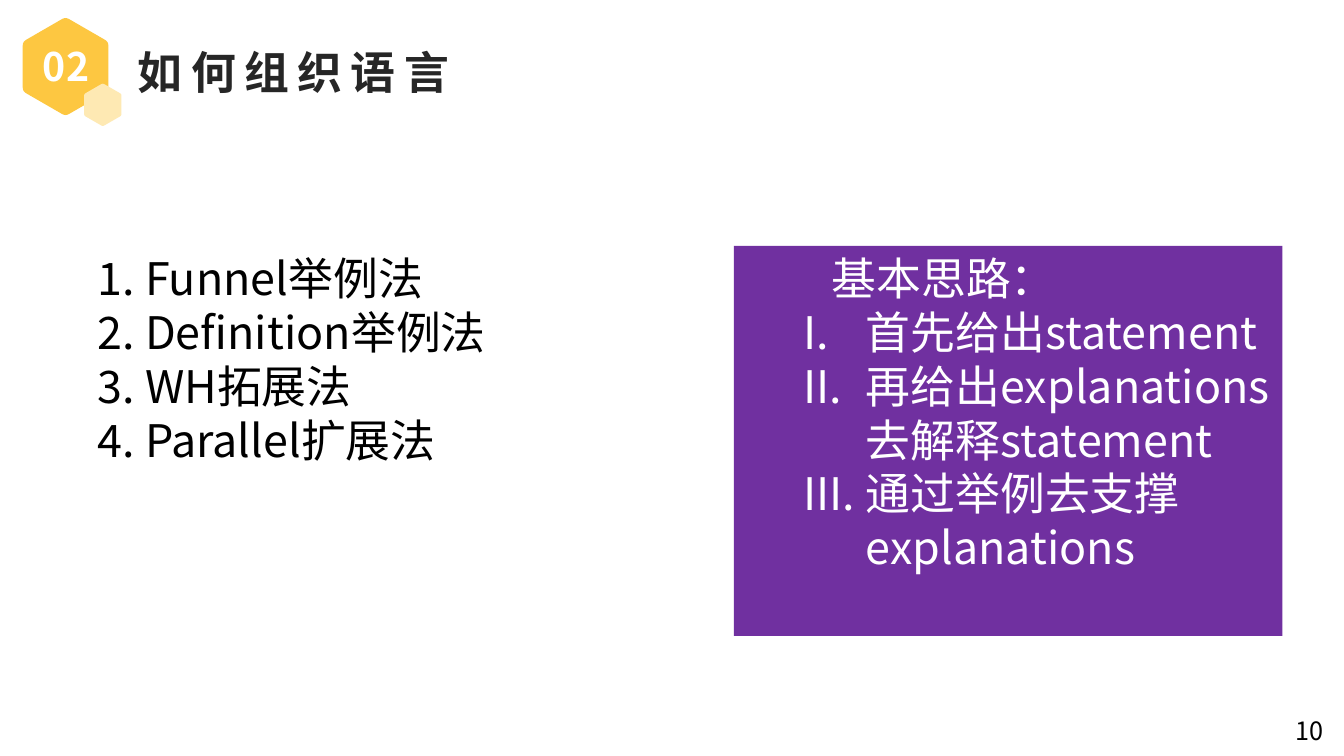
import math

from lxml import etree
from pptx import Presentation
from pptx.dml.color import RGBColor
from pptx.enum.shapes import MSO_SHAPE
from pptx.enum.text import MSO_ANCHOR, PP_ALIGN
from pptx.oxml.ns import qn
from pptx.util import Inches, Pt

LEFT, CENTER = PP_ALIGN.LEFT, PP_ALIGN.CENTER
TOP = MSO_ANCHOR.TOP
RECTANGLE = MSO_SHAPE.RECTANGLE

FONT = "Noto Sans CJK SC"
COLORS = {
    "amber": "FDC741",
    "cream": "FEE9B3",
    "title": "262626",
    "purple": "7030A0",
    "white": "FFFFFF",
    "black": "000000",
}
METHODS = ["1. Funnel举例法", "2. Definition举例法", "3. WH拓展法", "4. Parallel扩展法"]
STEPS = ["首先给出statement", "再给出explanations去解释statement", "通过举例去支撑explanations"]


def rgb(name):
    return RGBColor.from_string(COLORS[name])


def fill_plain(sp, color):
    sp.fill.solid()
    sp.fill.fore_color.rgb = rgb(color)
    sp.line.fill.background()
    sp.shadow.inherit = False


def write(sp, lines, size, color, bold=False, align=LEFT, wrap=True, spacing=0):
    """Fill a shape with one paragraph per line; spacing is between letters, in points."""
    tf = sp.text_frame
    tf.text = "\n".join(lines)
    tf.word_wrap = wrap
    tf.vertical_anchor = TOP
    for p in tf.paragraphs:
        p.alignment = align
        p.line_spacing = Pt(size * 1.2)
        for r in p.runs:
            r.font.name = FONT
            r.font.size = Pt(size)
            r.font.bold = bold
            r.font.color.rgb = rgb(color)
            rPr = r.font._element
            etree.SubElement(rPr, qn("a:ea"), typeface=FONT)
            if spacing:
                rPr.set("spc", str(spacing * 100))
    return tf.paragraphs


def indent(p, margin, first):
    pPr = p._p.get_or_add_pPr()
    pPr.set("marL", str(Inches(margin)))
    pPr.set("indent", str(Inches(first)))
    return pPr


def add_text(slide, x, y, w, h, lines, size, color, **style):
    sp = slide.shapes.add_textbox(Inches(x), Inches(y), Inches(w), Inches(h))
    return write(sp, lines, size, color, **style)


def add_hexagon(slide, cx, cy, width, color):
    """Draw a hexagon standing on a corner, with slightly rounded corners."""
    radius = width / math.sqrt(3)
    trim = 0.08
    corners = [(cx + radius * math.sin(math.radians(a)), cy - radius * math.cos(math.radians(a)))
               for a in range(0, 360, 60)]
    points = []
    for i, corner in enumerate(corners):
        before, after = corners[i - 1], corners[(i + 1) % 6]
        start, end = [[c + (n - c) * trim for c, n in zip(corner, near)] for near in (before, after)]
        for t in (0, 0.25, 0.5, 0.75, 1):
            points.append([Inches((1 - t) ** 2 * s + 2 * t * (1 - t) * c + t ** 2 * e)
                           for s, c, e in zip(start, corner, end)])
    builder = slide.shapes.build_freeform(*points[0])
    builder.add_line_segments(points[1:], close=True)
    fill_plain(builder.convert_to_shape(), color)


def add_header(slide, x, y, number, title):
    add_hexagon(slide, x + 0.42, y + 0.48, 0.85, "amber")
    add_text(slide, x + 1.04, y + 0.21, 3.4, 0.64, [title], 32, "title",
             bold=True, wrap=False, spacing=6)
    add_text(slide, x + 0.07, y + 0.19, 0.71, 0.57, [number], 28, "white",
             bold=True, align=CENTER)
    add_hexagon(slide, x + 0.79, y + 0.86, 0.37, "cream")


def add_methods(slide, x, y, w, h):
    for p in add_text(slide, x, y, w, h, METHODS, 32, "black"):
        indent(p, 0.58, 0.29)


def add_approach(slide, x, y, w, h):
    sp = slide.shapes.add_shape(RECTANGLE, Inches(x), Inches(y), Inches(w), Inches(h))
    fill_plain(sp, "purple")
    heading, *steps = write(sp, ["基本思路："] + STEPS, 32, "white")
    indent(heading, 0.58, 0.29)
    for p in steps:
        pPr = indent(p, 1.21, -0.62)
        etree.SubElement(pPr, qn("a:buFont"), typeface=FONT)
        etree.SubElement(pPr, qn("a:buAutoNum"), type="romanUcPeriod")


def main():
    prs = Presentation()
    prs.slide_width, prs.slide_height = Inches(13.33), Inches(7.5)
    slide = prs.slides.add_slide(prs.slide_layouts[6])
    add_header(slide, 0.23, 0.18, "02", "如何组织语言")
    add_methods(slide, 0, 2.44, 8.31, 2.26)
    add_approach(slide, 7.28, 2.44, 5.44, 3.87)
    add_text(slide, 12.75, 7.05, 0.59, 0.4, ["10"], 18, "black")
    prs.save("out.pptx")


if __name__ == "__main__":
    main()
